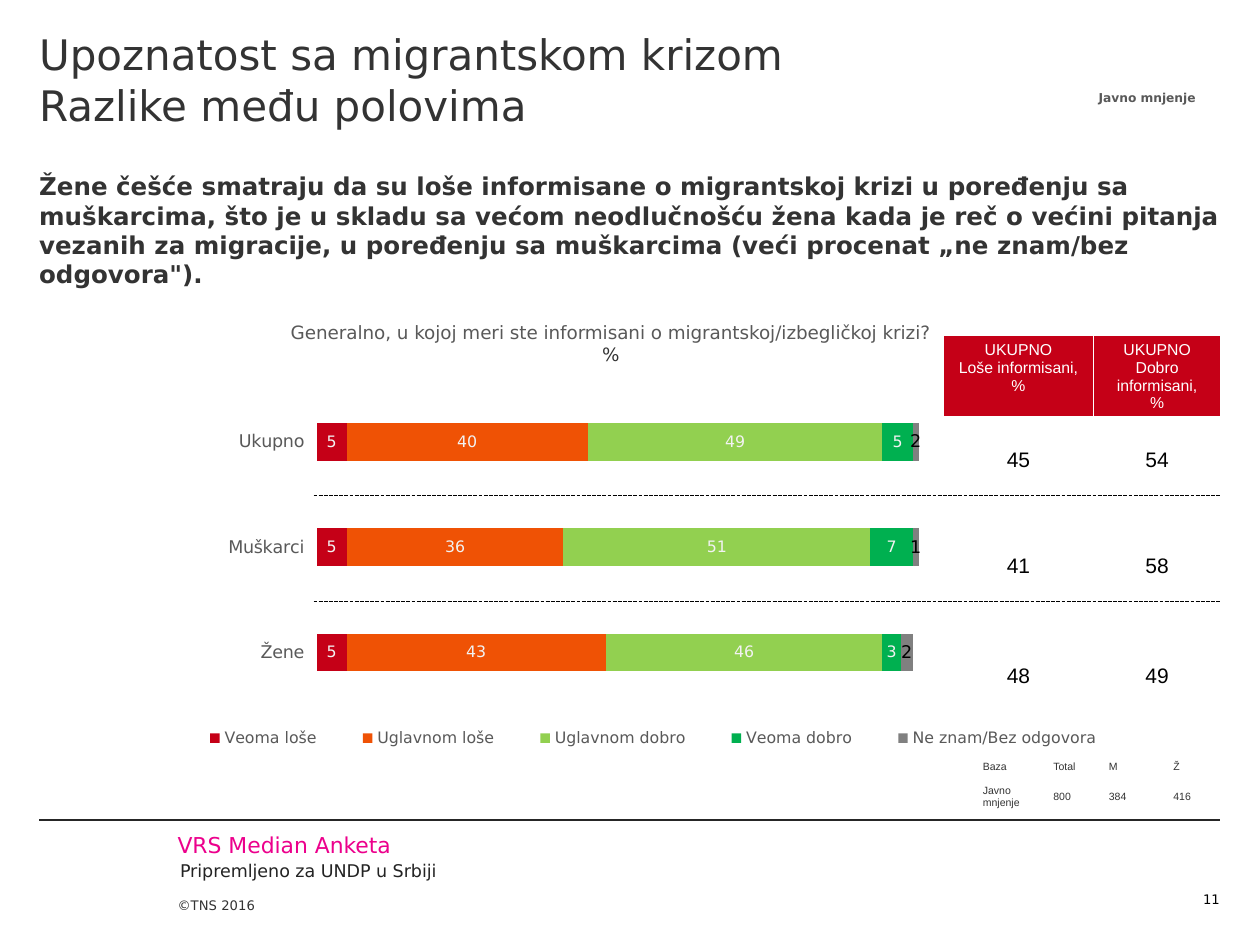
from lxml.etree import SubElement
from pptx import Presentation
from pptx.chart.data import CategoryChartData
from pptx.dml.color import RGBColor
from pptx.enum.chart import XL_CHART_TYPE as ChartType, XL_LEGEND_POSITION as LegendPos
from pptx.enum.chart import XL_TICK_LABEL_POSITION as TickLabels
from pptx.enum.dml import MSO_LINE as Dash
from pptx.enum.shapes import MSO_CONNECTOR as Connector
from pptx.enum.text import MSO_ANCHOR as Anchor, PP_ALIGN as Align
from pptx.oxml import parse_xml
from pptx.oxml.ns import qn
from pptx.util import Cm, Pt

WHITE = RGBColor(0xFF, 0xFF, 0xFF)
BLACK = RGBColor(0, 0, 0)
INK = RGBColor(0x33, 0x33, 0x33)
RULE = RGBColor(0x26, 0x26, 0x26)
FOOTER = RGBColor(0x23, 0x23, 0x23)
GREY = RGBColor(0x59, 0x59, 0x59)
PALE = RGBColor(0xF2, 0xF2, 0xF2)
MAGENTA = RGBColor(0xEC, 0x00, 0x8C)
RED = RGBColor(0xC5, 0x00, 0x17)
ORANGE = RGBColor(0xEF, 0x52, 0x05)
LIME = RGBColor(0x92, 0xD0, 0x50)
GREEN = RGBColor(0x00, 0xB0, 0x50)
SILVER = RGBColor(0x80, 0x80, 0x80)
SANS, ARIAL = "DejaVu Sans", "Arial"
LEFT, RIGHT = 0.79, 24.59
WIDTH = RIGHT - LEFT

TEXTS = [
    {"at": (LEFT, 0, WIDTH, 2.87), "inset": (0, 0.58, 0, 0),
     "runs": [("Upoznatost sa migrantskom krizom\nRazlike među polovima", 24, INK)]},
    {"at": (LEFT, 2.87, 23.9, 2.11), "inset": (0, 0.58, 0, 0), "bold": True,
     "runs": [("Žene češće smatraju da su loše informisane o migrantskoj krizi u poređenju sa "
               "muškarcima, što je u skladu sa većom neodlučnošću žena kada je reč o većini "
               "pitanja vezanih za migracije, u poređenju sa muškarcima (veći procenat "
               "„ne znam/bez odgovora\").", 14, INK)]},
    {"at": (5.61, 6.35, 13.41, 1.14), "inset": (0.25, 0.13, 0.25, 0.13), "align": Align.CENTER,
     "runs": [("Generalno, u kojoj meri ste informisani o migrantskoj/izbegličkoj krizi? ", 10.5, GREY),
              ("%", 10.5, INK)]},
    {"at": (21.84, 1.7, 2.57, 0.56), "inset": (0.25, 0.13, 0.25, 0.13), "align": Align.CENTER,
     "bold": True, "wrap": False, "runs": [("Javno mnjenje", 7, GREY)]},
    {"at": (3.58, 16.76, 8.41, 0.53), "runs": [("VRS Median Anketa", 12.5, MAGENTA)]},
    {"at": (3.63, 17.33, 17.3, 0.43), "runs": [("Pripremljeno za UNDP u Srbiji", 10, FOOTER)]},
    {"at": (3.58, 17.58, 2.11, 1.47), "inset": (0, 0, 0, 0.98), "anchor": Anchor.BOTTOM,
     "runs": [("©TNS 2016", 7.5, INK)]},
    {"at": (23.19, 17.58, 1.4, 0.71), "anchor": Anchor.BOTTOM, "align": Align.RIGHT,
     "runs": [("11", 7.5, BLACK)]},
]

GROUPS = ["Ukupno", "Muškarci", "Žene"]
ANSWERS = [
    ("Veoma loše", (5, 5, 5), RED, PALE, 9),
    ("Uglavnom loše", (40, 36, 43), ORANGE, PALE, 9),
    ("Uglavnom dobro", (49, 51, 46), LIME, PALE, 9),
    ("Veoma dobro", (5, 7, 3), GREEN, PALE, 9),
    ("Ne znam/Bez odgovora", (2, 1, 2), SILVER, BLACK, 10),
]
EDGES = {"xMode": "edge", "yMode": "edge"}
PLOT = {"layoutTarget": "inner", **EDGES, "x": 0.235, "y": 0.096, "w": 0.51, "h": 0.664}
LEGEND = {**EDGES, "x": 0.11, "y": 0.8, "w": 0.82, "h": 0.06}

TOTALS = [["UKUPNO\nLoše informisani, %", "UKUPNO Dobro informisani,\n%"],
          ["45", "54"], ["41", "58"], ["48", "49"]]
BASE = [["Baza", "Total", "M", "Ž"], ["Javno mnjenje", "800", "384", "416"]]

RULES = [(LEFT, 16.53, RULE, Dash.SOLID),
         (6.32, 9.99, BLACK, Dash.SQUARE_DOT),
         (6.32, 12.12, BLACK, Dash.SQUARE_DOT)]


def apply(target, values):
    for name, value in values.items():
        setattr(target, name, value)


def style(font, size, color, name=SANS, bold=False):
    apply(font, {"size": Pt(size), "name": name, "bold": bold})
    font.color.rgb = color


def add_text(slide, item):
    frame = slide.shapes.add_textbox(*map(Cm, item["at"])).text_frame
    left, top, right, bottom = map(Cm, item.get("inset", (0, 0, 0, 0)))
    apply(frame, {"margin_left": left, "margin_top": top, "margin_right": right,
                  "margin_bottom": bottom, "word_wrap": item.get("wrap", True),
                  "vertical_anchor": item.get("anchor", Anchor.TOP)})
    paragraph = frame.paragraphs[0]
    paragraph.alignment = item.get("align", Align.LEFT)
    for words, size, color in item["runs"]:
        for number, line in enumerate(words.split("\n")):
            if number:
                paragraph.add_line_break()
            run = paragraph.add_run()
            run.text = line
            style(run.font, size, color, bold=item.get("bold", False))


def add_borders(cell, bottom_width):
    properties = cell._tc.get_or_add_tcPr()
    for number, (side, width) in enumerate(
            [("lnL", 1), ("lnR", 1), ("lnT", 1), ("lnB", bottom_width)]):
        line = properties.makeelement(qn("a:" + side), {"w": str(Pt(width))})
        fill = SubElement(line, qn("a:solidFill"))
        SubElement(fill, qn("a:srgbClr"), val=str(WHITE))
        properties.insert(number, line)


def add_grid(slide, rows, at, widths, heights, align, body, header):
    size = map(Cm, (*at, sum(widths), sum(heights)))
    table = slide.shapes.add_table(len(rows), len(widths), *size).table
    apply(table, {"first_row": False, "horz_banding": False})
    for column, width in zip(table.columns, widths):
        column.width = Cm(width)
    for number, (row, height, words) in enumerate(zip(table.rows, heights, rows)):
        row.height = Cm(height)
        look = body if number else header
        for cell, word in zip(row.cells, words):
            cell.text = word
            cell.vertical_anchor = look["anchor"]
            if look["fill"]:
                cell.fill.solid()
                cell.fill.fore_color.rgb = look["fill"]
            else:
                cell.fill.background()
            for paragraph in cell.text_frame.paragraphs:
                paragraph.alignment = align
                for run in paragraph.runs:
                    style(run.font, look["size"], look["color"], ARIAL)
            add_borders(cell, 1 if number else 3)


def place(parent, index, parts):
    for old in parent.findall(qn("c:layout")):
        parent.remove(old)
    inner = "".join(f'<c:{tag} val="{value}"/>' for tag, value in parts.items())
    parent.insert(index, parse_xml(
        '<c:layout xmlns:c="http://schemas.openxmlformats.org/drawingml/2006/chart">'
        f"<c:manualLayout>{inner}</c:manualLayout></c:layout>"))


def add_answers(slide):
    data = CategoryChartData(number_format="0")
    data.categories = GROUPS
    for name, values, *_ in ANSWERS:
        data.add_series(name, values)
    chart = slide.shapes.add_chart(ChartType.BAR_STACKED, Cm(LEFT), Cm(6.93),
                                   Cm(WIDTH), Cm(9.58), data).chart
    apply(chart, {"has_title": False, "has_legend": True})
    style(chart.font, 10, BLACK)
    apply(chart.legend, {"position": LegendPos.BOTTOM, "include_in_layout": False})
    style(chart.legend.font, 9, GREY)
    groups, percent = chart.category_axis, chart.value_axis
    apply(groups, {"reverse_order": True, "tick_label_position": TickLabels.LOW})
    groups.format.line.fill.background()
    style(groups.tick_labels.font, 10, GREY)
    apply(percent, {"minimum_scale": 0, "maximum_scale": 100,
                    "has_major_gridlines": False, "visible": False})
    plot = chart.plots[0]
    apply(plot, {"gap_width": 182, "overlap": 100, "vary_by_categories": False})
    for series, (_, _, fill, ink, size) in zip(plot.series, ANSWERS):
        series.format.fill.solid()
        series.format.fill.fore_color.rgb = fill
        labels = series.data_labels
        apply(labels, {"show_value": True, "number_format": "0",
                       "number_format_is_linked": False})
        style(labels.font, size, ink)
    place(chart._chartSpace.chart.plotArea, 0, PLOT)
    place(chart.legend._element, 1, LEGEND)


def main():
    deck = Presentation()
    apply(deck, {"slide_width": Cm(25.4), "slide_height": Cm(19.05)})
    slide = deck.slides.add_slide(deck.slide_layouts[6])
    add_answers(slide)
    plain = {"anchor": Anchor.MIDDLE, "fill": None}
    add_grid(slide, TOTALS, (19.02, 6.76), (3.02, 2.57), (1.42, 1.68, 2.57, 1.88), Align.CENTER,
             {**plain, "size": 12, "color": BLACK},
             {"anchor": Anchor.TOP, "fill": RED, "size": 9, "color": WHITE})
    small = {**plain, "size": 6, "color": INK}
    add_grid(slide, BASE, (19.56, 15.21), (1.42, 1.12, 1.3, 1.42), (0.46, 0.66), Align.LEFT,
             small, small)
    for start, height, color, dash in RULES:
        rule = slide.shapes.add_connector(Connector.STRAIGHT, *map(Cm, (start, height, RIGHT, height)))
        rule.line.color.rgb = color
        apply(rule.line, {"width": Pt(0.75), "dash_style": dash})
        SubElement(rule._element.spPr, qn("a:effectLst"))
    for item in TEXTS:
        add_text(slide, item)
    deck.save("out.pptx")


if __name__ == "__main__":
    main()
